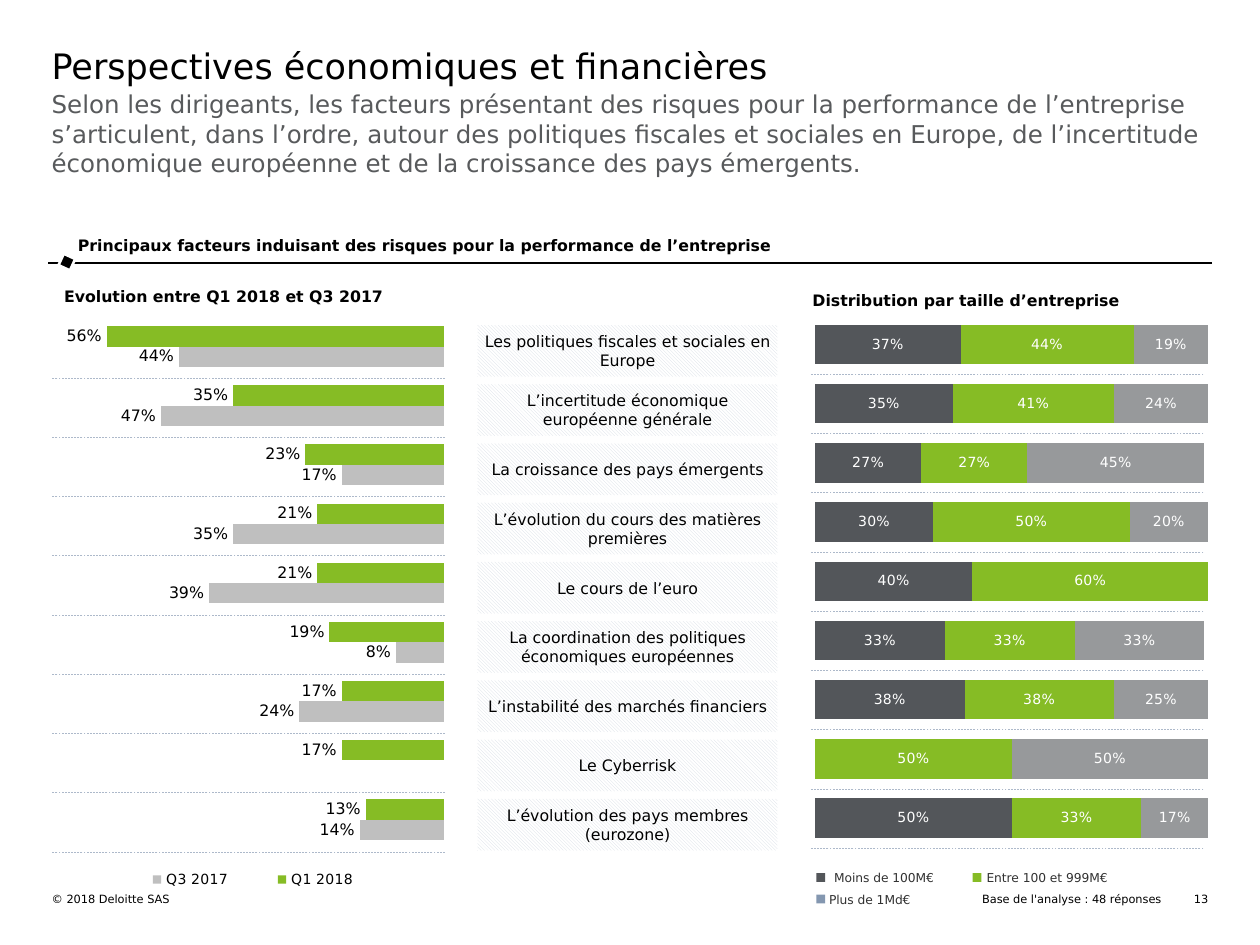
"""Builds the slide on economic and financial risk factors with two bar charts."""
from lxml import etree
from pptx import Presentation
from pptx import util as u
from pptx.chart.data import CategoryChartData
from pptx.dml.color import RGBColor
from pptx.enum import chart as c
from pptx.enum import dml, shapes, text
from pptx.oxml.ns import qn

BLACK = RGBColor(0x00, 0x00, 0x00)
WHITE = RGBColor(0xFF, 0xFF, 0xFF)
GREY_TEXT = RGBColor(0x58, 0x5A, 0x5C)
LEGEND_TEXT = RGBColor(0x31, 0x31, 0x31)
GREEN = RGBColor(0x86, 0xBC, 0x25)
LIGHT_GREY = RGBColor(0xBF, 0xBF, 0xBF)
DARK_GREY = RGBColor(0x53, 0x56, 0x5A)
MID_GREY = RGBColor(0x97, 0x99, 0x9B)
BLUE_GREY = RGBColor(0x84, 0x97, 0xB0)
HATCH = RGBColor(0xD6, 0xDC, 0xE5)
DASH = RGBColor(0xAD, 0xB9, 0xCA)
FONT = "DejaVu Sans"

TITLE = "Perspectives économiques et financières"
SUBTITLE = (
    "Selon les dirigeants, les facteurs présentant des risques pour la performance de "
    "l’entreprise s’articulent, dans l’ordre, autour des politiques fiscales et sociales en "
    "Europe, de l’incertitude économique européenne et de la croissance des pays émergents."
)
SECTION = "Principaux facteurs induisant des risques pour la performance de l’entreprise"
FACTORS = [
    "Les politiques fiscales et sociales en Europe",
    "L’incertitude économique européenne générale",
    "La croissance des pays émergents",
    "L’évolution du cours des matières premières",
    "Le cours de l’euro",
    "La coordination des politiques économiques européennes",
    "L’instabilité des marchés financiers",
    "Le Cyberrisk",
    "L’évolution des pays membres (eurozone)",
]
EVOLUTION = [
    ("Q1 2018", GREEN, (0.56, 0.35, 0.23, 0.21, 0.21, 0.19, 0.17, 0.17, 0.13)),
    ("Q3 2017", LIGHT_GREY, (0.44, 0.47, 0.17, 0.35, 0.39, 0.08, 0.24, None, 0.14)),
]
DISTRIBUTION = [
    ("Moins de 100M€", DARK_GREY, (0.37, 0.35, 0.27, 0.3, 0.4, 0.33, 0.38, None, 0.5)),
    ("Entre 100 et 999M€", GREEN, (0.44, 0.41, 0.27, 0.5, 0.6, 0.33, 0.38, 0.5, 0.33)),
    ("Plus de 1Md€", MID_GREY, (0.19, 0.24, 0.45, 0.2, None, 0.33, 0.25, 0.5, 0.17)),
]
SIZE_LEGEND = [
    ("Moins de 100M€", DARK_GREY, 6.48, 6.93, 0.14),
    ("Entre 100 et 999M€", GREEN, 7.72, 6.93, 0.11),
    ("Plus de 1Md€", BLUE_GREY, 6.48, 7.1, 0.1),
]
ROW_PITCH = 0.47
LABEL_TOP = 2.58
DASH_COLUMNS = [(0.41, 3.53, 3.0), (6.43, 9.55, 2.97)]


def inches(*lengths):
    return [u.Inches(length) for length in lengths]


def write(shape, words, size=9, color=BLACK, bold=False, align=text.PP_ALIGN.LEFT,
          anchor=text.MSO_ANCHOR.TOP, insets=(0, 0)):
    frame = shape.text_frame
    frame.word_wrap = True
    frame.vertical_anchor = anchor
    frame.margin_left = frame.margin_right = u.Inches(insets[0])
    frame.margin_top = frame.margin_bottom = u.Inches(insets[1])
    paragraph = frame.paragraphs[0]
    paragraph.text = words
    paragraph.alignment = align
    font = paragraph.font
    font.name, font.size, font.bold = FONT, u.Pt(size), bold
    font.color.rgb = color


def add_text(slide, words, box, **style):
    write(slide.shapes.add_textbox(*inches(*box)), words, **style)


def add_rectangle(slide, box, color):
    shape = slide.shapes.add_shape(shapes.MSO_SHAPE.RECTANGLE, *inches(*box))
    shape.shadow.inherit = False
    shape.fill.solid()
    shape.fill.fore_color.rgb = color
    shape.line.fill.background()
    return shape


def add_line(slide, left, right, top, color, width, dash=None):
    line = slide.shapes.add_connector(
        shapes.MSO_CONNECTOR.STRAIGHT, *inches(right, top, left, top))
    line.line.color.rgb = color
    line.line.width = u.Pt(width)
    line.line.dash_style = dash
    etree.SubElement(line._element.spPr, qn("a:effectLst"))


def set_layout(parent, index, shares, inner=False):
    for old in parent.findall(qn("c:layout")):
        parent.remove(old)
    layout = etree.Element(qn("c:layout"))
    manual = etree.SubElement(layout, qn("c:manualLayout"))
    settings = [("layoutTarget", "inner")] if inner else []
    settings += [("xMode", "edge"), ("yMode", "edge"), *zip("xywh", shares)]
    for name, value in settings:
        etree.SubElement(manual, qn("c:" + name), val=str(value))
    parent.insert(index, layout)


def add_bars(slide, kind, box, series, plot, maximum, gap, overlap, size, color,
             number_format, reverse=False):
    data = CategoryChartData()
    data.categories = [str(row + 1) for row in range(len(FACTORS))]
    for name, _, values in series:
        data.add_series(name, values)
    chart = slide.shapes.add_chart(kind, *inches(*box), data).chart
    chart.has_title = False
    chart.has_legend = False
    chart.font.name, chart.font.size = FONT, u.Pt(size)
    chart.font.color.rgb = color
    category, value = chart.category_axis, chart.value_axis
    category.visible = value.visible = False
    category.reverse_order, value.reverse_order = True, reverse
    value.has_major_gridlines = False
    value.minimum_scale, value.maximum_scale = 0, maximum
    bars = chart.plots[0]
    bars.vary_by_categories = False
    bars.gap_width, bars.overlap = gap, overlap
    for one, (_, fill, _) in zip(bars.series, series):
        one.format.fill.solid()
        one.format.fill.fore_color.rgb = fill
        labels = one.data_labels
        labels.show_value = True
        labels.number_format, labels.number_format_is_linked = number_format, False
        labels.position = (c.XL_LABEL_POSITION.CENTER if overlap
                           else c.XL_LABEL_POSITION.OUTSIDE_END)
        labels.font.name, labels.font.size = FONT, u.Pt(size)
        labels.font.color.rgb = color
    set_layout(chart._chartSpace.find(".//" + qn("c:plotArea")), 0, plot, inner=True)
    return chart


def main():
    presentation = Presentation()
    presentation.slide_width, presentation.slide_height = inches(10, 7.5)
    slide = presentation.slides.add_slide(presentation.slide_layouts[6])
    middle, right = text.MSO_ANCHOR.MIDDLE, text.PP_ALIGN.RIGHT

    add_line(slide, 0.38, 9.62, 2.09, BLACK, 1)
    marker = add_rectangle(slide, (0.48, 2.03, 0.1, 0.1), BLACK)
    marker.line.color.rgb, marker.line.width = WHITE, u.Pt(1.5)
    marker.rotation = 114.8
    add_text(slide, TITLE, (0.41, 0.35, 9.16, 0.37), size=20)
    add_text(slide, SUBTITLE, (0.41, 0.71, 9.18, 0.83), size=14, color=GREY_TEXT)
    add_text(slide, SECTION, (0.52, 1.83, 9.07, 0.25), bold=True, insets=(0.1, 0.04))
    add_text(slide, "© 2018 Deloitte SAS", (0.41, 7.08, 4.39, 0.11), size=6.5)
    add_text(slide, "13", (9.34, 7.08, 0.25, 0.11), size=6.5, align=right)
    add_text(slide, "Base de l'analyse : 48 réponses", (5.2, 7.08, 4.02, 0.11),
             size=6.5, align=right)

    evolution = add_bars(
        slide, c.XL_CHART_TYPE.BAR_CLUSTERED, (0.24, 2.31, 3.4, 4.79), EVOLUTION,
        (0.122, 0.043, 0.844, 0.882), 0.6, 90, 0, 9, BLACK, "0%", reverse=True)
    evolution.has_legend = True
    legend = evolution.legend
    legend.position = c.XL_LEGEND_POSITION.LEFT
    legend.include_in_layout = False
    legend.font.name, legend.font.size = FONT, u.Pt(8)
    legend.font.color.rgb = BLACK
    set_layout(legend._element, 1, (0.18, 0.95, 0.68, 0.05))
    add_bars(slide, c.XL_CHART_TYPE.BAR_STACKED, (6.39, 2.39, 3.2, 4.34), DISTRIBUTION,
             (0.025, 0.025, 0.975, 0.975), 1, 50, 100, 8, WHITE, "###0%")

    for row, factor in enumerate(FACTORS):
        offset = row * ROW_PITCH
        label = add_rectangle(slide, (3.79, LABEL_TOP + offset, 2.38, 0.41), WHITE)
        label.fill.patterned()
        label.fill.pattern = dml.MSO_PATTERN.LIGHT_DOWNWARD_DIAGONAL
        label.fill.fore_color.rgb, label.fill.back_color.rgb = HATCH, WHITE
        write(label, factor, align=text.PP_ALIGN.CENTER, anchor=middle, insets=(0, 0.04))
        for start, end, top in DASH_COLUMNS:
            add_line(slide, start, end, top + offset, DASH, 0.25, dml.MSO_LINE.DASH)

    add_text(slide, "Distribution par taille d’entreprise", (6.35, 2.27, 2.64, 0.23),
             bold=True, anchor=middle, insets=(0.1, 0.05))
    add_text(slide, "Evolution entre Q1 2018 et Q3 2017", (0.41, 2.27, 2.81, 0.17),
             bold=True, anchor=middle, insets=(0.1, 0.05))
    for name, color, left, top, gap in SIZE_LEGEND:
        add_rectangle(slide, (left, top, 0.07, 0.07), color)
        add_text(slide, name, (left + gap, top - 0.02, 1.14, 0.12), size=7, color=LEGEND_TEXT)

    presentation.save("out.pptx")


if __name__ == "__main__":
    main()
